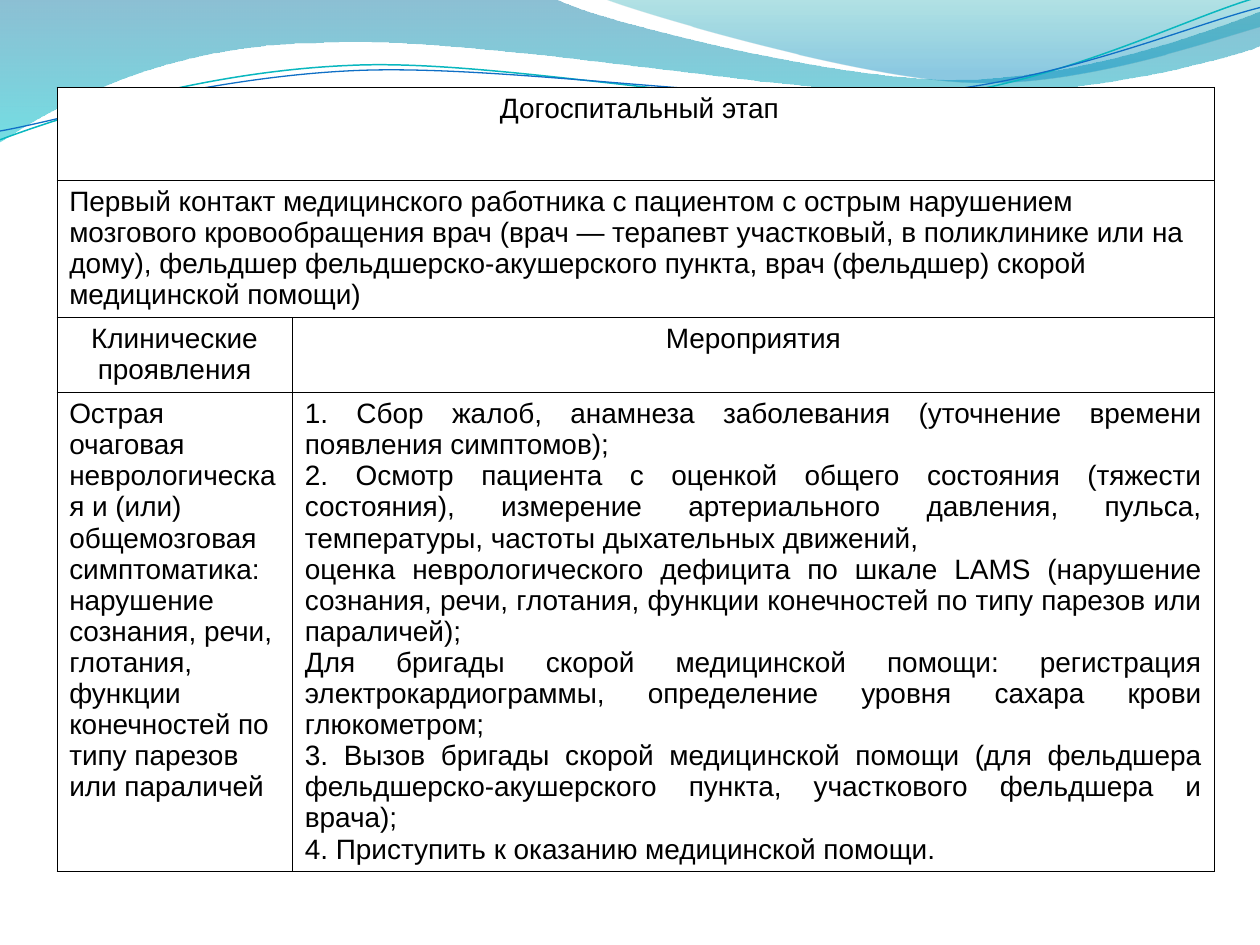
from dataclasses import dataclass

from lxml.etree import SubElement
from pptx import Presentation
from pptx.dml.color import RGBColor
from pptx.enum.text import PP_ALIGN as Align
from pptx.oxml.ns import qn
from pptx.util import Inches, Pt

FONT, TEXT_SIZE = "Arial", 16
BLACK, WHITE = "000000", "FFFFFF"

Point = tuple[float, float]


@dataclass
class Stop:
    position: float
    color: str
    opacity: int


@dataclass
class Wave:
    """Outline: a start, then one point per line or three per Bezier curve."""
    start: Point
    segments: list[tuple[Point, ...]]
    stops: tuple[Stop, ...] = ()
    angle: int = 0
    line: str = ""
    width: float = 0


@dataclass
class Entry:
    row: int
    column: int
    paragraphs: list[str]
    align: Align = Align.LEFT
    full_width: bool = False


WAVES = [
    Wave((0, 0), [
        ((4.4, -0.01),),
        ((4.76, 0.17), (6.64, 0.63), (7.58, 0.63)),
        ((8.53, 0.63), (9.58, 0.26), (10, 0.09)),
        ((10.01, 0.36),),
        ((9.83, 0.44), (8.7, 0.76), (7.46, 0.75)),
        ((6.22, 0.75), (3.82, 0.28), (2.57, 0.34)),
        ((1.29, 0.35), (0.46, 0.83), (-0.01, 1.13)),
        ((0, 0),),
    ], (Stop(0, "0074A0", 45), Stop(1, "00C4CD", 55)), 270),
    Wave((4.79, -0.01), [
        ((5.09, 0.11), (6.82, 0.62), (7.69, 0.65)),
        ((8.56, 0.69), (9.61, 0.32), (10, 0.21)),
        ((10, 0),),
        ((4.79, -0.01),),
    ], (Stop(0.2, "008ABF", 45), Stop(1, "00A0A8", 30)), 90),
    Wave((0, 1.11), [
        ((0.48, 0.93), (1.58, 0.57), (2.77, 0.52)),
        ((3.95, 0.46), (5.93, 0.89), (7.13, 0.8)),
        ((8.33, 0.71), (9.38, 0.15), (9.98, -0.02)),
    ], line="09B7BF", width=0.85),
    Wave((0, 1.04), [
        ((0.47, 0.96), (1.64, 0.61), (2.83, 0.56)),
        ((4.03, 0.51), (5.97, 0.83), (7.17, 0.75)),
        ((8.36, 0.67), (9.41, 0.21), (10, 0.06)),
    ], line="0F6FC6", width=0.75),
]

COLUMNS = [1.87, 7.32]
ROWS = [0.74, 0.81, 0.5, 3.51]
ENTRIES = [
    Entry(0, 0, [" Догоспитальный этап"], Align.CENTER, True),
    Entry(1, 0, [
        "Первый контакт медицинского работника с пациентом с острым нарушением "
        "мозгового кровообращения врач (врач — терапевт участковый, в поликлинике "
        "или на дому), фельдшер фельдшерско-акушерского пункта, врач (фельдшер) "
        "скорой медицинской помощи)"], full_width=True),
    Entry(2, 0, ["Клинические проявления"], Align.CENTER),
    Entry(2, 1, ["Мероприятия"], Align.CENTER),
    Entry(3, 0, [
        "Острая очаговая неврологическая и (или) общемозговая симптоматика: "
        "нарушение сознания, речи, глотания, функции конечностей по типу парезов "
        "или параличей"]),
    Entry(3, 1, [
        "1. Сбор жалоб, анамнеза заболевания (уточнение времени появления симптомов);",
        "2. Осмотр пациента с оценкой общего состояния (тяжести состояния), измерение "
        "артериального давления, пульса, температуры, частоты дыхательных движений,",
        "оценка неврологического дефицита по шкале LAMS (нарушение сознания, речи, "
        "глотания, функции конечностей по типу парезов или параличей);",
        "Для бригады скорой медицинской помощи: регистрация электрокардиограммы, "
        "определение уровня сахара крови глюкометром;",
        "3. Вызов бригады скорой медицинской помощи (для фельдшера "
        "фельдшерско-акушерского пункта, участкового фельдшера и врача);",
        "4. Приступить к оказанию медицинской помощи.",
    ], Align.JUSTIFY),
]


def rgb(color: str) -> RGBColor:
    return RGBColor.from_string(color)


def bend_segments(shape, segments: list[tuple[Point, ...]]) -> None:
    """Join each three straight steps of a curve into one Bezier segment."""
    steps = iter(list(shape._element.iter(qn("a:lnTo"))))
    for segment in segments:
        first, *others = [next(steps) for _ in segment]
        if others:
            first.tag = qn("a:cubicBezTo")
            for step in others:
                first.append(step[0])
                step.getparent().remove(step)


def draw_wave(page, wave: Wave) -> None:
    start, *points = [(Inches(x), Inches(y)) for x, y in
                      [wave.start, *(point for part in wave.segments for point in part)]]
    builder = page.shapes.build_freeform(*start)
    builder.add_line_segments(points, close=bool(wave.stops))
    shape = builder.convert_to_shape()
    bend_segments(shape, wave.segments)
    shape.shadow.inherit = False
    if wave.stops:
        shape.fill.gradient()
        shape.fill.gradient_angle = wave.angle
        for target, stop in zip(shape.fill.gradient_stops, wave.stops):
            target.position = stop.position
            target.color.rgb = rgb(stop.color)
        for node, stop in zip(shape._element.spPr.iter(qn("a:srgbClr")), wave.stops):
            SubElement(node, qn("a:alpha"), val=str(stop.opacity * 1000))
        shape.line.fill.background()
    else:
        shape.fill.background()
        shape.line.color.rgb = rgb(wave.line)
        shape.line.width = Pt(wave.width)


def style_cell(cell) -> None:
    properties = cell._tc.get_or_add_tcPr()
    for side in ("lnL", "lnR", "lnT", "lnB"):
        border = SubElement(properties, qn(f"a:{side}"), w=str(Pt(0.06)))
        fill = SubElement(border, qn("a:solidFill"))
        SubElement(fill, qn("a:srgbClr"), val=BLACK)
    cell.fill.solid()
    cell.fill.fore_color.rgb = rgb(WHITE)


def write_entry(table, entry: Entry) -> None:
    cell = table.cell(entry.row, entry.column)
    if entry.full_width:
        cell.merge(table.cell(entry.row, len(COLUMNS) - 1))
    frame = cell.text_frame
    for index, text in enumerate(entry.paragraphs):
        para = frame.add_paragraph() if index else frame.paragraphs[0]
        para.alignment = entry.align
        span = para.add_run()
        span.text = text
        span.font.name = FONT
        span.font.size = Pt(TEXT_SIZE)
        span.font.color.rgb = rgb(BLACK)


def draw_table(page) -> None:
    table = page.shapes.add_table(
        len(ROWS), len(COLUMNS), Inches(0.45), Inches(0.69),
        Inches(sum(COLUMNS)), Inches(sum(ROWS))).table
    table.first_row = table.horz_banding = False
    for column, width in zip(table.columns, COLUMNS):
        column.width = Inches(width)
    for row, height in zip(table.rows, ROWS):
        row.height = Inches(height)
    for cell in table.iter_cells():
        style_cell(cell)
    for entry in ENTRIES:
        write_entry(table, entry)


def main() -> None:
    deck = Presentation()
    deck.slide_width, deck.slide_height = Inches(10), Inches(7.5)
    page = deck.slides.add_slide(deck.slide_layouts[6])

    # Wave decoration along the top
    for wave in WAVES:
        draw_wave(page, wave)

    # Care stage table
    draw_table(page)
    deck.save("out.pptx")


if __name__ == "__main__":
    main()
